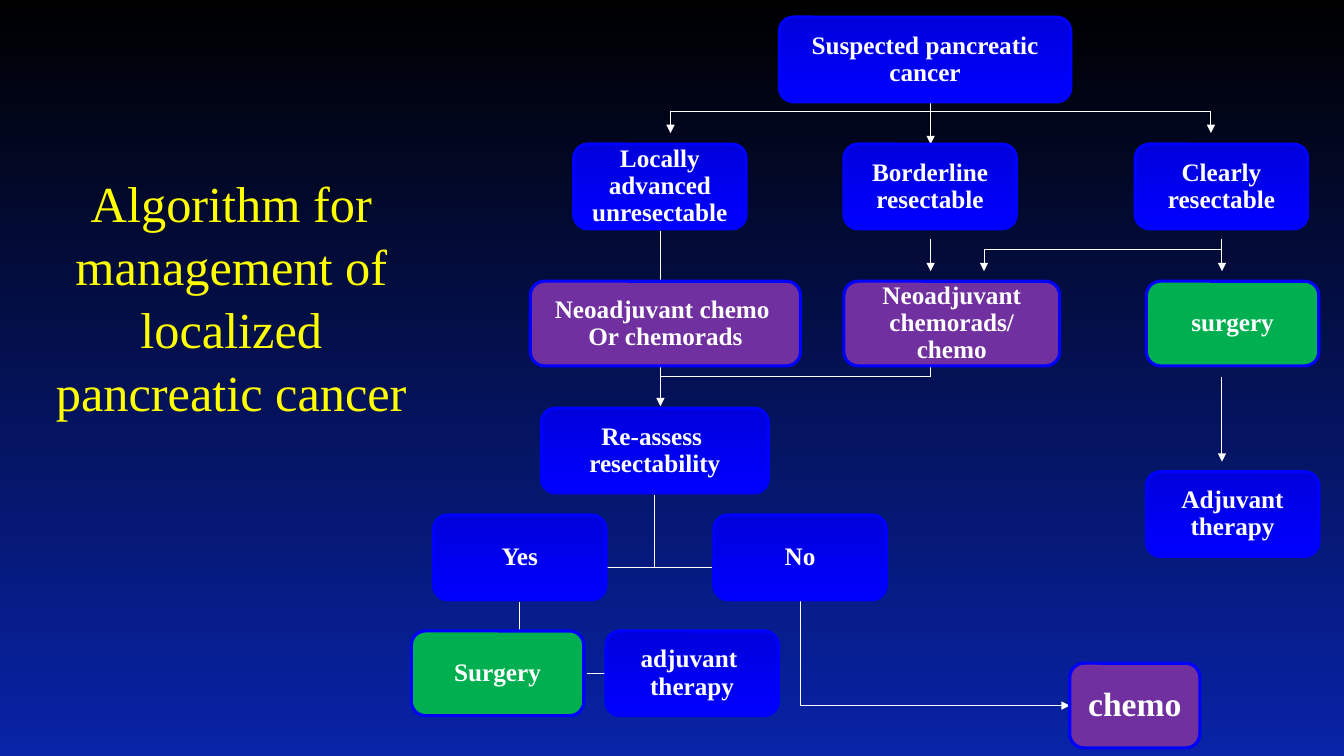
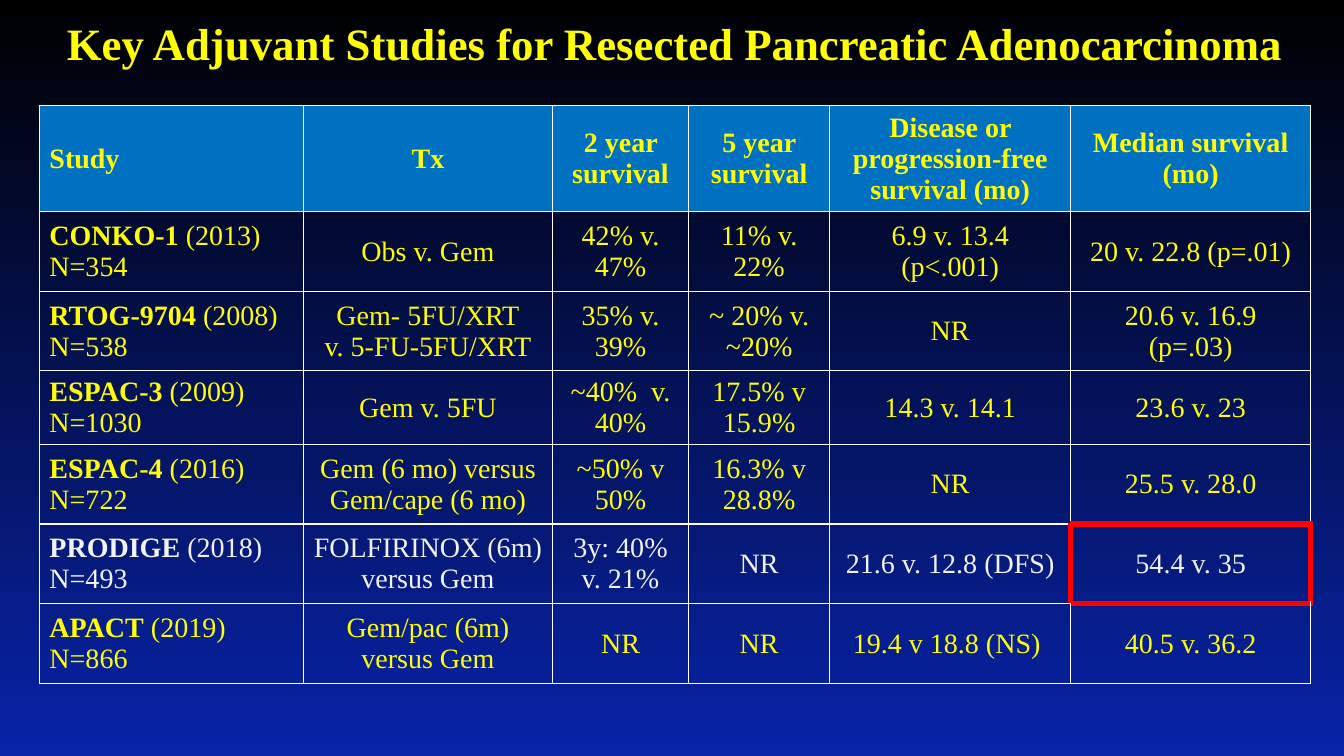
from lxml import etree
from pptx import Presentation
from pptx.dml.color import RGBColor
from pptx.enum.shapes import MSO_CONNECTOR, MSO_SHAPE
from pptx.enum.text import MSO_ANCHOR, MSO_AUTO_SIZE, PP_ALIGN
from pptx.oxml.ns import qn
from pptx.util import Inches, Pt

LEFT, CENTER, MIDDLE = PP_ALIGN.LEFT, PP_ALIGN.CENTER, MSO_ANCHOR.MIDDLE
STRAIGHT, ROUNDED = MSO_CONNECTOR.STRAIGHT, MSO_SHAPE.ROUNDED_RECTANGLE
TITLE_ONLY = 5
FONT = "Times New Roman"
COLORS = {
    "black": "000000", "navy": "0823A8", "yellow": "FFFF00", "white": "FFFFFF",
    "pale": "F2F2F2", "blue": "0000FF", "deep blue": "0000DC", "purple": "7030A0",
    "green": "00B050", "header": "0070C0", "red": "FF0000",
}

# Flowchart content: box height, default width, row tops and line columns
BOX_HEIGHT, BOX_WIDTH = 0.84, 1.71
ROWS = [0.17, 1.43, 2.79, 4.05, 5.11, 6.26]
LOCAL_X, BORDER_X, CLEAR_X, REASSESS_X, NO_X = 6.55, 9.23, 12.12, 6.49, 7.94

# text, left, top, width, fill, text size
BOXES = [
    ("Suspected pancreatic cancer", 7.73, ROWS[0], 2.89, "blue", 18),
    ("Locally advanced unresectable", 5.69, ROWS[1], BOX_WIDTH, "blue", 18),
    ("Borderline resectable", 8.37, ROWS[1], BOX_WIDTH, "blue", 18),
    ("Clearly resectable", 11.26, ROWS[1], BOX_WIDTH, "blue", 18),
    ("Neoadjuvant chemo \nOr chemorads", 5.26, ROWS[2], 2.68, "purple", 18),
    ("Neoadjuvant chemorads/\nchemo", 8.37, ROWS[2], 2.14, "purple", 18),
    ("surgery", 11.37, ROWS[2], BOX_WIDTH, "green", 18),
    ("Re-assess \nresectability", 5.37, ROWS[3], 2.25, "blue", 18),
    ("Adjuvant\ntherapy", 11.37, 4.68, BOX_WIDTH, "blue", 18),
    ("Yes", 4.3, ROWS[4], BOX_WIDTH, "blue", 18),
    ("No", 7.08, ROWS[4], BOX_WIDTH, "blue", 18),
    ("Surgery", 4.08, ROWS[5], BOX_WIDTH, "green", 18),
    ("adjuvant \ntherapy", 6.01, ROWS[5], BOX_WIDTH, "blue", 18),
    ("chemo", 10.61, 6.58, 1.29, "purple", 24),
]

# Corner points of each route, and whether it ends in an arrowhead
ROUTES = [
    ([(BORDER_X, 1.01), (BORDER_X, 1.43)], True),
    ([(BORDER_X, 1.11), (6.65, 1.11), (6.65, 1.32)], True),
    ([(BORDER_X, 1.11), (12.01, 1.11), (12.01, 1.32)], True),
    ([(LOCAL_X, 2.29), (LOCAL_X, 3)], True),
    ([(BORDER_X, 2.37), (BORDER_X, 2.69)], True),
    ([(CLEAR_X, 2.37), (CLEAR_X, 2.69)], True),
    ([(CLEAR_X, 2.48), (9.76, 2.48), (9.76, 2.69)], True),
    ([(LOCAL_X, 3.63), (LOCAL_X, 4.03)], True),
    ([(BORDER_X, 3.63), (BORDER_X, 3.74), (LOCAL_X, 3.74)], False),
    ([(CLEAR_X, 3.74), (CLEAR_X, 4.58)], True),
    ([(REASSESS_X, 4.91), (REASSESS_X, 5.63), (4.57, 5.63)], True),
    ([(REASSESS_X, 5.63), (7.78, 5.63)], True),
    ([(5.15, 5.97), (5.15, 6.37)], True),
    ([(5.82, 6.68), (6.44, 6.68)], True),
    ([(NO_X, 5.95), (NO_X, 7), (10.61, 7)], True),
]

# Table content
COLUMN_WIDTHS = [2.62, 2.47, 1.35, 1.4, 2.39, 2.38]
ROW_HEIGHTS = [1.05, 0.79, 0.79, 0.73, 0.79, 0.79, 0.79]
HEADER = ["Study", "Tx", "2 year survival", "5 year survival",
          "Disease or progression-free survival (mo)", "Median survival (mo)"]
# study name, then the cells
STUDIES = [
    ("CONKO-1", " (2013)\nN=354", "Obs v. Gem", "42% v. 47%", "11% v. 22%",
     "6.9 v. 13.4 (p<.001)", "20 v. 22.8 (p=.01)"),
    ("RTOG-9704", " (2008)\nN=538", "Gem- 5FU/XRT\nv. 5-FU-5FU/XRT", "35% v.\n39%",
     "~ 20% v.\n~20%", "NR", "20.6 v. 16.9 (p=.03)"),
    ("ESPAC-3", " (2009)\nN=1030", "Gem v. 5FU", "~40%  v. 40%", "17.5% v 15.9%",
     "14.3 v. 14.1", "23.6 v. 23"),
    ("ESPAC-4", " (2016)\nN=722", "Gem (6 mo) versus Gem/cape (6 mo)", "~50% v 50%",
     "16.3% v 28.8%", "NR", "25.5 v. 28.0"),
    ("PRODIGE", " (2018)\nN=493", "FOLFIRINOX (6m) versus Gem", "3y: 40% v. 21%", "NR",
     "21.6 v. 12.8 (DFS)", "54.4 v. 35"),
    ("APACT", " (2019)\nN=866", "Gem/pac (6m) versus Gem", "NR", "NR",
     "19.4 v 18.8 (NS) ", "40.5 v. 36.2"),
]
PALE_ROW = 5
RED_CELL = (5, 5)


def rgb(name):
    return RGBColor.from_string(COLORS[name])


def shade(fill, top, bottom):
    """Vertical gradient from top to bottom."""
    fill.gradient()
    fill.gradient_angle = 270
    for stop, name in zip(fill.gradient_stops, (top, bottom)):
        stop.color.rgb = rgb(name)


def write(frame, text, lead="", size=20, color="yellow", bold=False, align=CENTER, spacing=None):
    """Write lines as paragraphs; lead is a bold start of the first one."""
    for index, line in enumerate(text.split("\n")):
        paragraph = frame.add_paragraph() if index else frame.paragraphs[0]
        paragraph.alignment = align
        if spacing:
            paragraph.line_spacing = spacing
        pieces = [(line, bold)]
        if lead and index == 0:
            pieces.insert(0, (lead, True))
        for piece, heavy in pieces:
            run = paragraph.add_run()
            run.text = piece
            run.font.name, run.font.size, run.font.bold = FONT, Pt(size), heavy
            run.font.color.rgb = rgb(color)


def add_titled_slide(presentation, text, left, top, width, **style):
    slide = presentation.slides.add_slide(presentation.slide_layouts[TITLE_ONLY])
    title = slide.shapes.title
    title.left, title.top = Inches(left), Inches(top)
    title.width, title.height = Inches(width), Inches(1.25)
    frame = title.text_frame
    frame.word_wrap, frame.auto_size = True, MSO_AUTO_SIZE.NONE
    frame.vertical_anchor = MIDDLE
    write(frame, text, **style)
    return slide


def add_route(slide, points, arrow):
    """Straight segments through the points, with the arrowhead on the last."""
    for start, end in zip(points, points[1:]):
        connector = slide.shapes.add_connector(
            STRAIGHT, *(Inches(value) for value in start + end))
        connector.line.color.rgb = rgb("white")
        connector.line.width = Pt(0.75)
        properties = connector._element.spPr
        etree.SubElement(properties, qn("a:effectLst"))
        if arrow and end == points[-1]:
            etree.SubElement(properties.find(qn("a:ln")), qn("a:tailEnd"), type="triangle")


def add_box(slide, text, left, top, width, fill, size):
    box = slide.shapes.add_shape(
        ROUNDED, Inches(left), Inches(top), Inches(width), Inches(BOX_HEIGHT))
    box.shadow.inherit = False
    if fill == "blue":
        shade(box.fill, "deep blue", "blue")
    else:
        box.fill.solid()
        box.fill.fore_color.rgb = rgb(fill)
    box.line.color.rgb = rgb("blue")
    box.line.width = Pt(2.25)
    frame = box.text_frame
    frame.word_wrap, frame.vertical_anchor = True, MIDDLE
    frame.margin_left = frame.margin_right = frame.margin_top = frame.margin_bottom = 0
    write(frame, text, size=size, color="white", bold=True, spacing=0.9)


def set_borders(cell, row, column):
    """White edges, red where the cell meets the highlighted cell."""
    neighbours = [("lnL", 0, -1), ("lnR", 0, 1), ("lnT", -1, 0), ("lnB", 1, 0)]
    properties = cell._tc.get_or_add_tcPr()
    for index, (tag, down, across) in enumerate(neighbours):
        red = RED_CELL in ((row, column), (row + down, column + across))
        edge = etree.Element(qn(f"a:{tag}"), w=str(Pt(4.5 if red else 1)))
        fill = etree.SubElement(edge, qn("a:solidFill"))
        etree.SubElement(fill, qn("a:srgbClr"), val=COLORS["red" if red else "white"])
        properties.insert(index, edge)


def add_study_table(slide):
    table = slide.shapes.add_table(
        len(ROW_HEIGHTS), len(COLUMN_WIDTHS), Inches(0.39), Inches(1.05),
        Inches(sum(COLUMN_WIDTHS)), Inches(sum(ROW_HEIGHTS))).table
    table.first_row = table.horz_banding = False
    for column, width in zip(table.columns, COLUMN_WIDTHS):
        column.width = Inches(width)
    for row, height in zip(table.rows, ROW_HEIGHTS):
        row.height = Inches(height)
    for r, (name, *values) in enumerate([("", *HEADER)] + STUDIES):
        for c, value in enumerate(values):
            cell = table.cell(r, c)
            cell.vertical_anchor = MIDDLE
            if r == 0:
                cell.fill.solid()
                cell.fill.fore_color.rgb = rgb("header")
            else:
                cell.fill.background()
            set_borders(cell, r, c)
            write(cell.text_frame, value, lead="" if c else name, bold=r == 0,
                  color="pale" if r == PALE_ROW else "yellow",
                  align=CENTER if c else LEFT)


def main():
    presentation = Presentation()
    presentation.slide_width, presentation.slide_height = Inches(13.33), Inches(7.5)
    shade(presentation.slide_master.background.fill, "black", "navy")

    # Flowchart: lines lie behind the boxes
    slide = add_titled_slide(
        presentation, "Algorithm for management of localized pancreatic cancer",
        0.4, 2.31, 3.79, size=36, spacing=1.04)
    for points, arrow in ROUTES:
        add_route(slide, points, arrow)
    for box in BOXES:
        add_box(slide, *box)

    # Study table
    slide = add_titled_slide(
        presentation, "Key Adjuvant Studies for Resected Pancreatic Adenocarcinoma",
        0.28, -0.2, 12.83, size=32, bold=True)
    add_study_table(slide)

    presentation.save("out.pptx")


if __name__ == "__main__":
    main()
